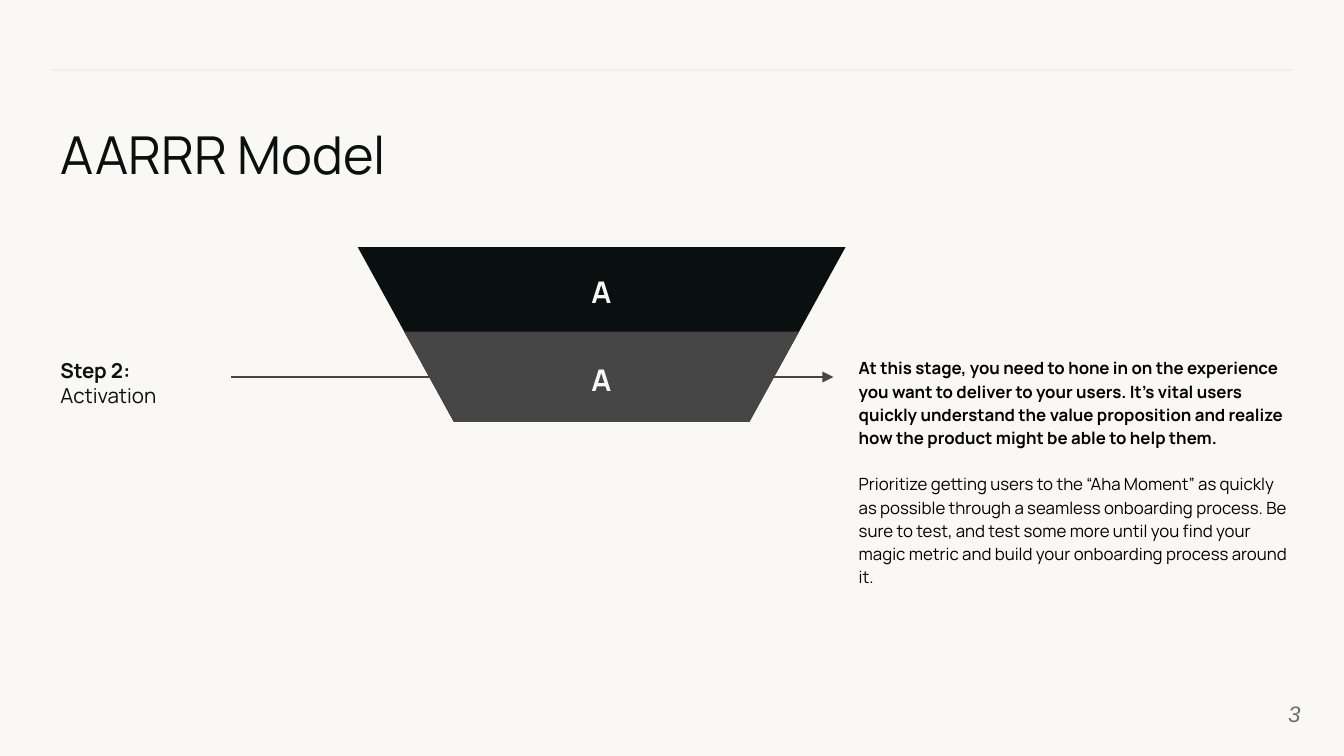
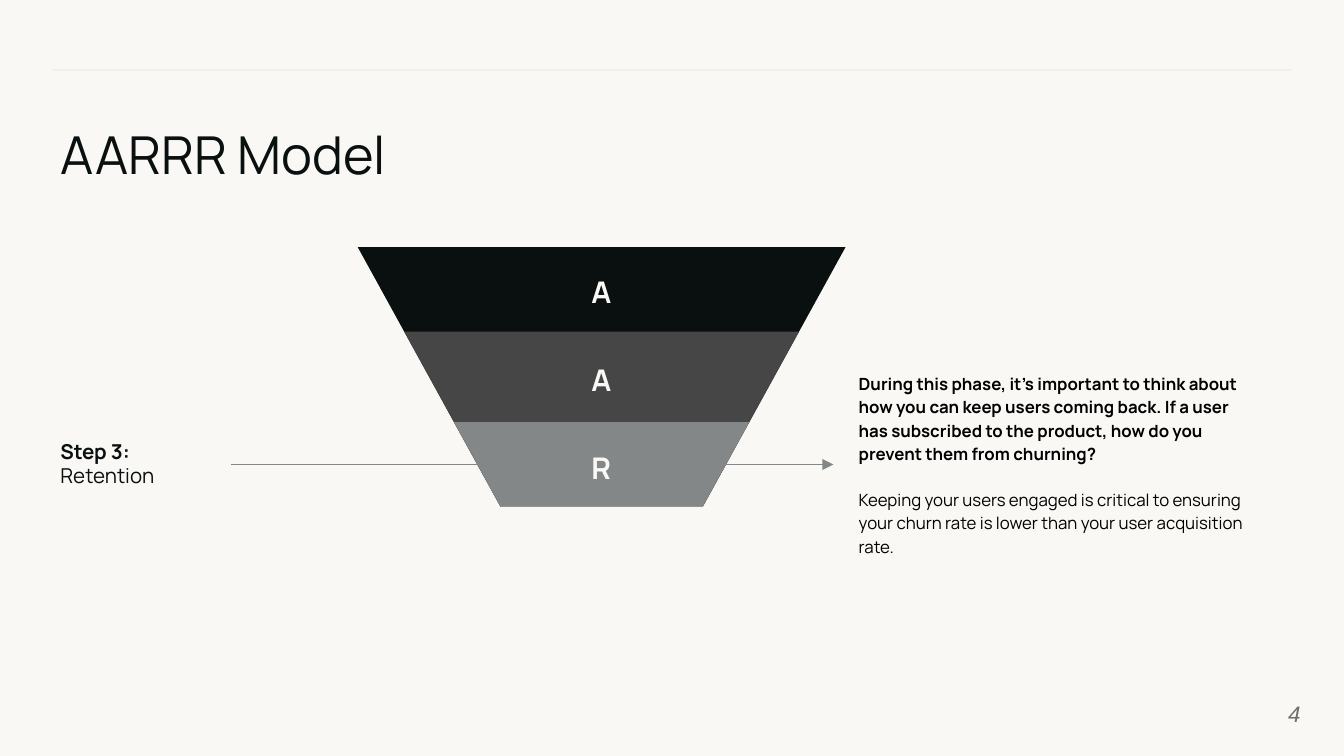
import pptx
import pptx.dml.color
import pptx.enum.shapes
import pptx.enum.text
import pptx.oxml
import pptx.oxml.ns
import pptx.util

Cm = pptx.util.Cm
Pt = pptx.util.Pt
RGBColor = pptx.dml.color.RGBColor
ALIGN = pptx.enum.text.PP_ALIGN
ANCHOR = pptx.enum.text.MSO_ANCHOR
SHAPE = pptx.enum.shapes.MSO_SHAPE

# Shared style
PAPER = RGBColor(0xF9, 0xF8, 0xF5)
INK = RGBColor(0x09, 0x10, 0x0F)
CHARCOAL = RGBColor(0x46, 0x46, 0x46)
GREY = RGBColor(0x83, 0x87, 0x88)
RULE = RGBColor(0xEF, 0xEF, 0xEF)
NUMBER = RGBColor(0x6C, 0x70, 0x6F)
BLACK = RGBColor(0, 0, 0)
FONT = "Manrope"

# Regions in cm: left, top, width, height
TITLE_BOX = (1.14, 2.31, 23.44, 1.3)
NUMBER_BOX = (23.06, 12.95, 1.52, 1.09)
FUNNEL_BOX = (6.76, 4.67, 9.22, 8.38)

# Funnel levels: letter and colour, with their edges in cm below the funnel's top
LEVELS = [("A", INK), ("A", CHARCOAL), ("R", GREY)]
EDGES = [0, 1.6, 3.31, 4.91]

STEPS = [
    dict(number=3, levels=2, step="Step 2:", name="Activation",
         label_box=(1.14, 6.81, 3.18, 0.86), lead_end=8.86,
         note_box=(16.23, 6.3, 8.2, 5.21),
         note=["At this stage, you need to hone in on the experience you want to "
               "deliver to your users. It’s vital users quickly understand the value "
               "proposition and realize how the product might be able to help them.",
               "Prioritize getting users to the “Aha Moment” as quickly as possible "
               "through a seamless onboarding process. Be sure to test, and test some "
               "more until you find your magic metric and build your onboarding "
               "process around it."]),
    dict(number=4, levels=3, step="Step 3:", name="Retention",
         label_box=(1.14, 8.33, 3.18, 0.86), lead_end=12.52,
         note_box=(16.23, 5.97, 7.49, 5.59),
         note=["During this phase, it’s important to think about how you can keep "
               "users coming back. If a user has subscribed to the product, how do "
               "you prevent them from churning?",
               "Keeping your users engaged is critical to ensuring your churn rate is "
               "lower than your user acquisition rate."]),
]


def fill_text(tf, lines, size, color, font=FONT, bold=(False,), anchor=ANCHOR.MIDDLE):
    """Write one paragraph per line and return the paragraphs."""
    tf.word_wrap = True
    tf.auto_size = pptx.enum.text.MSO_AUTO_SIZE.NONE
    tf.vertical_anchor = anchor
    tf.margin_left = tf.margin_right = tf.margin_top = tf.margin_bottom = 0
    tf.text = "\n".join(lines)
    for p, is_bold in zip(tf.paragraphs, bold):
        p.font.name, p.font.size, p.font.bold = font, Pt(size), is_bold
        p.font.color.rgb = color
    return tf.paragraphs


def add_text(s, box, lines, size, color, **style):
    tb = s.shapes.add_textbox(*map(Cm, box))
    return fill_text(tb.text_frame, lines, size, color, **style)


def add_block(s, kind, box, color):
    sp = s.shapes.add_shape(kind, *map(Cm, box))
    sp.shadow.inherit = False
    sp.fill.solid()
    sp.fill.fore_color.rgb = color
    sp.line.fill.background()
    return sp


def add_line(s, x1, x2, y, color, arrow=False):
    line = s.shapes.add_connector(
        pptx.enum.shapes.MSO_CONNECTOR.STRAIGHT, Cm(x1), Cm(y), Cm(x2), Cm(y))
    line.line.color.rgb = color
    line.line.width = Pt(0.75)
    sub = pptx.oxml.ns.qn
    if arrow:
        ln = line.line._get_or_add_ln()
        ln.append(ln.makeelement(sub("a:tailEnd"), {"type": "triangle"}))
    sp_pr = line.element.spPr
    sp_pr.append(sp_pr.makeelement(sub("a:effectLst"), {}))
    return line


def add_funnel(s, box, levels, lead_end):
    """Nested triangles on one apex, cut off below the last level shown."""
    x, y, w, h = box
    mid = x + w / 2
    for (letter, color), edge in zip(LEVELS[:levels], EDGES):
        height = h - edge
        width = w * height / h
        triangle = add_block(s, SHAPE.ISOSCELES_TRIANGLE,
                             (mid - width / 2, y + edge, width, height), color)
        triangle.rotation = 180
    cut = EDGES[levels]
    add_block(s, SHAPE.RECTANGLE, (x - 0.13, y + cut, w + 0.13, h - cut + 0.04), PAPER)

    # Lines from the label and to the note
    line_y = y + (EDGES[levels - 1] + cut) / 2
    add_line(s, 4.37, lead_end, line_y, color)
    add_line(s, 12.67, 15.75, line_y, color, arrow=True)

    # Letters
    for i, (letter, _) in enumerate(LEVELS[:levels]):
        p, = add_text(s, (mid - 1.72, y + EDGES[i], 3.43, EDGES[i + 1] - EDGES[i]),
                      [letter], 16, PAPER, bold=(True,))
        p.alignment = ALIGN.CENTER
        p.line_spacing = 1.15


def add_title(s, box, text):
    title = s.shapes.title
    title.left, title.top, title.width, title.height = map(Cm, box)
    p, = fill_text(title.text_frame, [text], 28, INK, anchor=ANCHOR.TOP)
    p.alignment = ALIGN.LEFT


def add_number(s, box, number):
    p, = add_text(s, box, [str(number)], 12, NUMBER, font="Arial")
    p.font.italic = True
    p.alignment = ALIGN.RIGHT


def add_note(s, box, note):
    ps = add_text(s, box, note, 9, BLACK, bold=(True, False))
    for p in ps:
        p.line_spacing = 1.15
    ps[0].space_after = Pt(12.4)


def add_step_slide(prs, step):
    s = prs.slides.add_slide(prs.slide_layouts[5])
    add_title(s, TITLE_BOX, "AARRR Model")
    add_number(s, NUMBER_BOX, step["number"])
    add_funnel(s, FUNNEL_BOX, step["levels"], step["lead_end"])
    add_text(s, step["label_box"], [step["step"], step["name"]], 11, INK,
             bold=(True, False))
    add_note(s, step["note_box"], step["note"])
    return s


def style_master(prs, s):
    """Give the master its background and the rule at the top."""
    master = prs.slide_master
    master.background.fill.solid()
    master.background.fill.fore_color.rgb = PAPER
    rule = add_line(s, 24.41, 0.99, 1.32, RULE)
    master.shapes.element.append(rule.element)


def main():
    prs = pptx.Presentation()
    prs.slide_width, prs.slide_height = Cm(25.4), Cm(14.29)
    slides = [add_step_slide(prs, step) for step in STEPS]
    style_master(prs, slides[0])
    prs.save("out.pptx")


if __name__ == "__main__":
    main()
